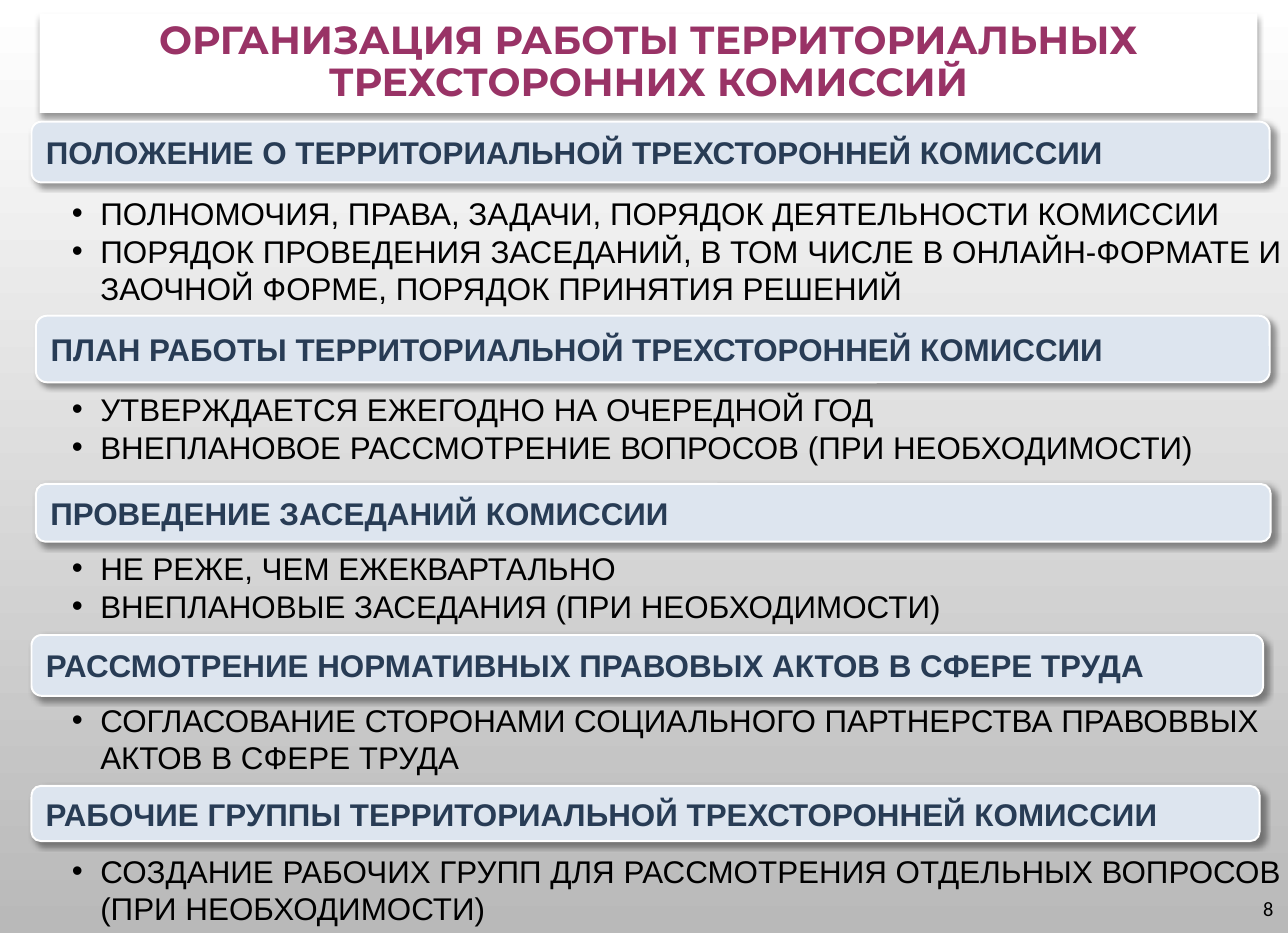
"""Build the slide on how territorial tripartite commissions organise their work."""
import pptx
import pptx.dml.color
import pptx.enum.shapes
import pptx.enum.text
import pptx.oxml.ns
import pptx.util
from lxml import etree

Cm = pptx.util.Cm
Pt = pptx.util.Pt
ALIGN = pptx.enum.text.PP_ALIGN
ANCHOR = pptx.enum.text.MSO_ANCHOR
qn = pptx.oxml.ns.qn

COLORS = {
    "white": "FFFFFF",
    "grey": "B9B9B9",
    "band": "DDE5EF",
    "heading": "283C55",
    "title": "993366",
    "text": "000000",
}
SLIDE_WIDTH, SLIDE_HEIGHT = 29.01, 21.01
LIST_LEFT = 0.71

FONTS = {
    "title": {"name": "Montserrat", "size": Pt(25), "bold": True},
    "heading": {"name": "Arial", "size": Pt(20), "bold": True},
    "list": {"name": "Arial", "size": Pt(20), "bold": False},
    "number": {"name": "Calibri", "size": Pt(13), "bold": False},
}
PARAGRAPHS = {
    "title": {"alignment": ALIGN.CENTER, "line_spacing": 0.9},
    "heading": {"alignment": ALIGN.LEFT},
    "list": {"alignment": ALIGN.LEFT, "space_before": Pt(0), "line_spacing": Pt(24)},
    "number": {"alignment": ALIGN.RIGHT},
}
FRAMES = {
    "title": {"vertical_anchor": ANCHOR.MIDDLE, "margin_left": Cm(0.33), "margin_right": Cm(0.33)},
    "heading": {"vertical_anchor": ANCHOR.MIDDLE, "margin_left": Cm(0.26), "margin_right": Cm(0.2)},
    "list": {"vertical_anchor": ANCHOR.TOP, "margin_left": Cm(0.91), "margin_right": Cm(0),
             "margin_top": Cm(0.08), "margin_bottom": Cm(0.08)},
    "number": {"vertical_anchor": ANCHOR.MIDDLE, "margin_left": Cm(0.33), "margin_right": Cm(0.33)},
}
TEXT_COLORS = {"title": "title", "heading": "heading", "list": "text", "number": "text"}

SECTIONS = [
    ("ПОЛОЖЕНИЕ О ТЕРРИТОРИАЛЬНОЙ ТРЕХСТОРОННЕЙ КОМИССИИ",
     (0.71, 2.74, 27.89, 1.37), (4.29, 2.95),
     ["ПОЛНОМОЧИЯ, ПРАВА, ЗАДАЧИ, ПОРЯДОК ДЕЯТЕЛЬНОСТИ КОМИССИИ",
      "ПОРЯДОК ПРОВЕДЕНИЯ ЗАСЕДАНИЙ, В ТОМ ЧИСЛЕ В ОНЛАЙН-ФОРМАТЕ И ЗАОЧНОЙ ФОРМЕ, "
      "ПОРЯДОК ПРИНЯТИЯ РЕШЕНИЙ"]),
    ("ПЛАН РАБОТЫ ТЕРРИТОРИАЛЬНОЙ ТРЕХСТОРОННЕЙ КОМИССИИ",
     (0.81, 7.11, 27.79, 1.5), (8.71, 1.85),
     ["УТВЕРЖДАЕТСЯ ЕЖЕГОДНО НА ОЧЕРЕДНОЙ ГОД",
      "ВНЕПЛАНОВОЕ РАССМОТРЕНИЕ ВОПРОСОВ (ПРИ НЕОБХОДИМОСТИ)"]),
    ("ПРОВЕДЕНИЕ ЗАСЕДАНИЙ КОМИССИИ",
     (0.81, 10.9, 27.81, 1.3), (12.29, 2.11),
     ["НЕ РЕЖЕ, ЧЕМ ЕЖЕКВАРТАЛЬНО",
      "ВНЕПЛАНОВЫЕ ЗАСЕДАНИЯ (ПРИ НЕОБХОДИМОСТИ)"]),
    ("РАССМОТРЕНИЕ НОРМАТИВНЫХ ПРАВОВЫХ АКТОВ В СФЕРЕ ТРУДА",
     (0.71, 14.3, 27.74, 1.37), (15.7, 1.85),
     ["СОГЛАСОВАНИЕ СТОРОНАМИ СОЦИАЛЬНОГО ПАРТНЕРСТВА ПРАВОВВЫХ АКТОВ В СФЕРЕ ТРУДА"]),
    ("РАБОЧИЕ ГРУППЫ ТЕРРИТОРИАЛЬНОЙ ТРЕХСТОРОННЕЙ КОМИССИИ",
     (0.71, 17.7, 27.66, 1.24), (19.1, 1.9),
     ["СОЗДАНИЕ РАБОЧИХ ГРУПП ДЛЯ РАССМОТРЕНИЯ ОТДЕЛЬНЫХ ВОПРОСОВ (ПРИ НЕОБХОДИМОСТИ)"]),
]


def color(key):
    return pptx.dml.color.RGBColor.from_string(COLORS[key])


def apply(target, values):
    for attribute, value in values.items():
        setattr(target, attribute, value)


def place(shape, box):
    apply(shape, dict(zip(("left", "top", "width", "height"), map(Cm, box))))


def add_bullet(paragraph):
    properties = paragraph._p.get_or_add_pPr()
    properties.set("marL", str(Cm(0.64)))
    properties.set("indent", str(-Cm(0.64)))
    etree.SubElement(properties, qn("a:buFont"), typeface="Arial")
    etree.SubElement(properties, qn("a:buChar"), char="•")


def write(shape, role, lines):
    frame = shape.text_frame
    frame.word_wrap = True
    frame.auto_size = pptx.enum.text.MSO_AUTO_SIZE.NONE
    apply(frame, FRAMES[role])
    frame.text = "\n".join(lines)
    for paragraph in frame.paragraphs:
        if role == "list":
            add_bullet(paragraph)
        apply(paragraph, PARAGRAPHS[role])
        for run in paragraph.runs:
            apply(run.font, FONTS[role])
            run.font.color.rgb = color(TEXT_COLORS[role])


def cast_shadow(shape, degrees):
    shape.shadow.inherit = False
    effects = shape._element.spPr.find(qn("a:effectLst"))
    shadow = etree.SubElement(effects, qn("a:outerShdw"), blurRad=str(Pt(4)), dist=str(Pt(3)),
                              dir=str(degrees * 60000), algn="ctr", rotWithShape="0")
    tint = etree.SubElement(shadow, qn("a:srgbClr"), val=COLORS["text"])
    etree.SubElement(tint, qn("a:alpha"), val="40000")


def paint_background(slide):
    fill = slide.background.fill
    fill.gradient()
    fill.gradient_angle = 270
    for stop, position, key in zip(fill.gradient_stops, (0, 1), ("white", "grey")):
        stop.position = position
        stop.color.rgb = color(key)


def format_title(title):
    place(title, (0.89, 0.3, 27.43, 2.24))
    title.fill.solid()
    title.fill.fore_color.rgb = color("white")
    title.line.fill.background()
    cast_shadow(title, 90)
    write(title, "title", ["ОРГАНИЗАЦИЯ РАБОТЫ ТЕРРИТОРИАЛЬНЫХ ТРЕХСТОРОННИХ КОМИССИЙ"])


def add_heading(slide, heading, box):
    band = slide.shapes.add_shape(pptx.enum.shapes.MSO_SHAPE.ROUNDED_RECTANGLE, *map(Cm, box))
    band.fill.solid()
    band.fill.fore_color.rgb = color("band")
    band.line.color.rgb = color("white")
    band.line.width = Pt(1.25)
    cast_shadow(band, 45)
    write(band, "heading", [heading])


def add_text_box(slide, role, box, lines):
    write(slide.shapes.add_textbox(*map(Cm, box)), role, lines)


def main():
    deck = pptx.Presentation()
    deck.slide_width, deck.slide_height = Cm(SLIDE_WIDTH), Cm(SLIDE_HEIGHT)
    slide = deck.slides.add_slide(deck.slide_layouts[1])
    paint_background(slide)
    format_title(slide.shapes.title)
    for index, (heading, band_box, (top, height), points) in enumerate(SECTIONS):
        add_heading(slide, heading, band_box)
        list_box = (LIST_LEFT, top, SLIDE_WIDTH - LIST_LEFT, height)
        if index == 0:
            body = slide.placeholders[1]
            place(body, list_box)
            write(body, "list", points)
        else:
            add_text_box(slide, "list", list_box, points)
    add_text_box(slide, "number", (27.18, 19.89, 1.83, 1.12), ["8"])
    deck.save("out.pptx")


if __name__ == "__main__":
    main()
